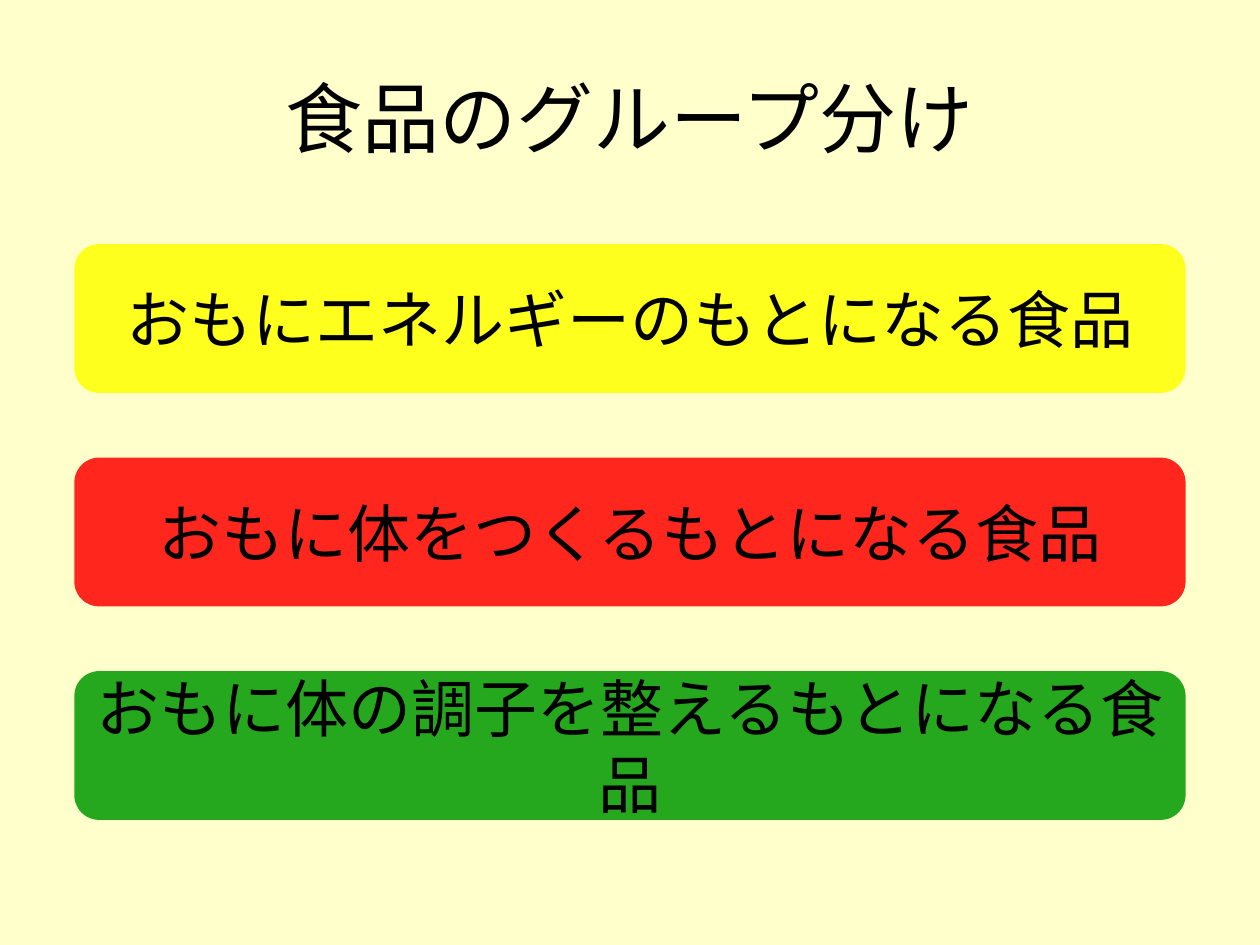
from dataclasses import dataclass

from lxml.etree import SubElement
from pptx import Presentation
from pptx.dml.color import RGBColor
from pptx.enum.shapes import MSO_SHAPE
from pptx.enum.text import MSO_ANCHOR, PP_ALIGN
from pptx.oxml.ns import qn
from pptx.util import Pt


@dataclass(frozen=True)
class Theme:
    font: str = "Noto Sans CJK JP"
    background: str = "FFFFCC"
    text: str = "000000"
    energy: str = "FFFF00"
    body: str = "FF0000"
    condition: str = "009900"
    title_size: int = 44
    group_size: int = 36
    opacity: int = 85


theme = Theme()


def write_text(shape, text, size):
    """Put one centred line of text in the middle of a shape."""
    text_frame = shape.text_frame
    text_frame.text = text
    text_frame.word_wrap = True
    text_frame.vertical_anchor = MSO_ANCHOR.MIDDLE
    paragraph = text_frame.paragraphs[0]
    paragraph.alignment = PP_ALIGN.CENTER
    font = paragraph.runs[0].font
    font.size = Pt(size)
    font.color.rgb = RGBColor.from_string(theme.text)
    font.name = theme.font
    # Japanese letters take the East Asian font
    run_properties = paragraph.runs[0]._r.get_or_add_rPr()
    SubElement(run_properties, qn("a:ea"), typeface=theme.font)


# Slide and background
presentation = Presentation()
presentation.slide_width = Pt(720)
presentation.slide_height = Pt(540)
slide = presentation.slides.add_slide(presentation.slide_layouts[6])
slide.background.fill.solid()
slide.background.fill.fore_color.rgb = RGBColor.from_string(theme.background)

# Title
title = slide.shapes.add_textbox(Pt(36), Pt(21.6), Pt(648), Pt(90))
write_text(title, "食品のグループ分け", theme.title_size)

# Food groups, evenly spaced from top to bottom
food_groups = [
    ("おもにエネルギーのもとになる食品", theme.energy),
    ("おもに体をつくるもとになる食品", theme.body),
    ("おもに体の調子を整えるもとになる食品", theme.condition),
]
group_left, group_top = 42.5, 139.5
group_width, group_height = 635, 85
group_pitch = 122

for index, (text, color) in enumerate(food_groups):
    group = slide.shapes.add_shape(
        MSO_SHAPE.ROUNDED_RECTANGLE,
        Pt(group_left), Pt(group_top + index * group_pitch),
        Pt(group_width), Pt(group_height),
    )
    group.shadow.inherit = False
    group.line.fill.background()
    group.fill.solid()
    group.fill.fore_color.rgb = RGBColor.from_string(color)
    # Slightly transparent fill
    fill_color = group._element.spPr.find(qn("a:solidFill"))[0]
    SubElement(fill_color, qn("a:alpha"), val=str(theme.opacity * 1000))
    write_text(group, text, theme.group_size)

presentation.save("out.pptx")
